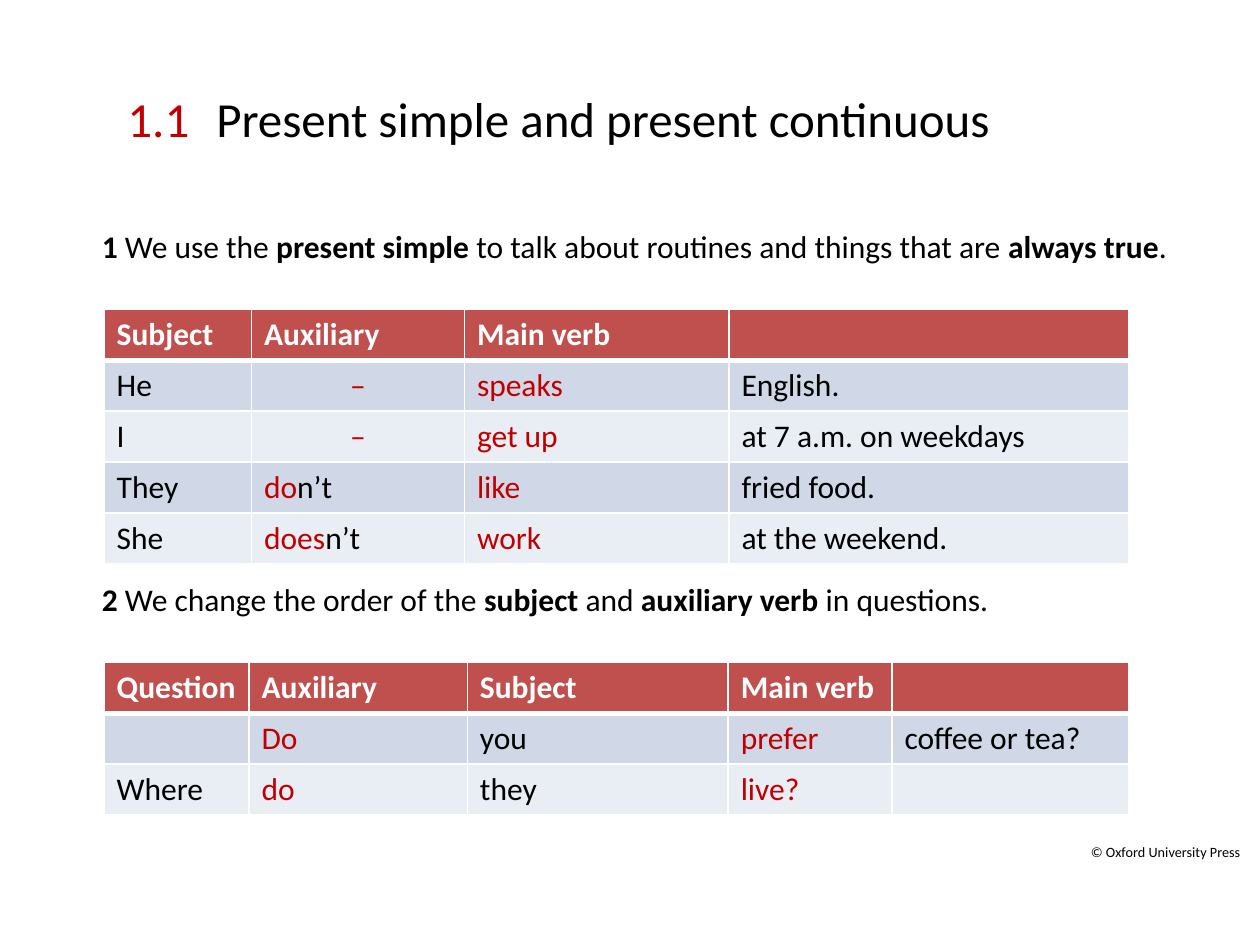
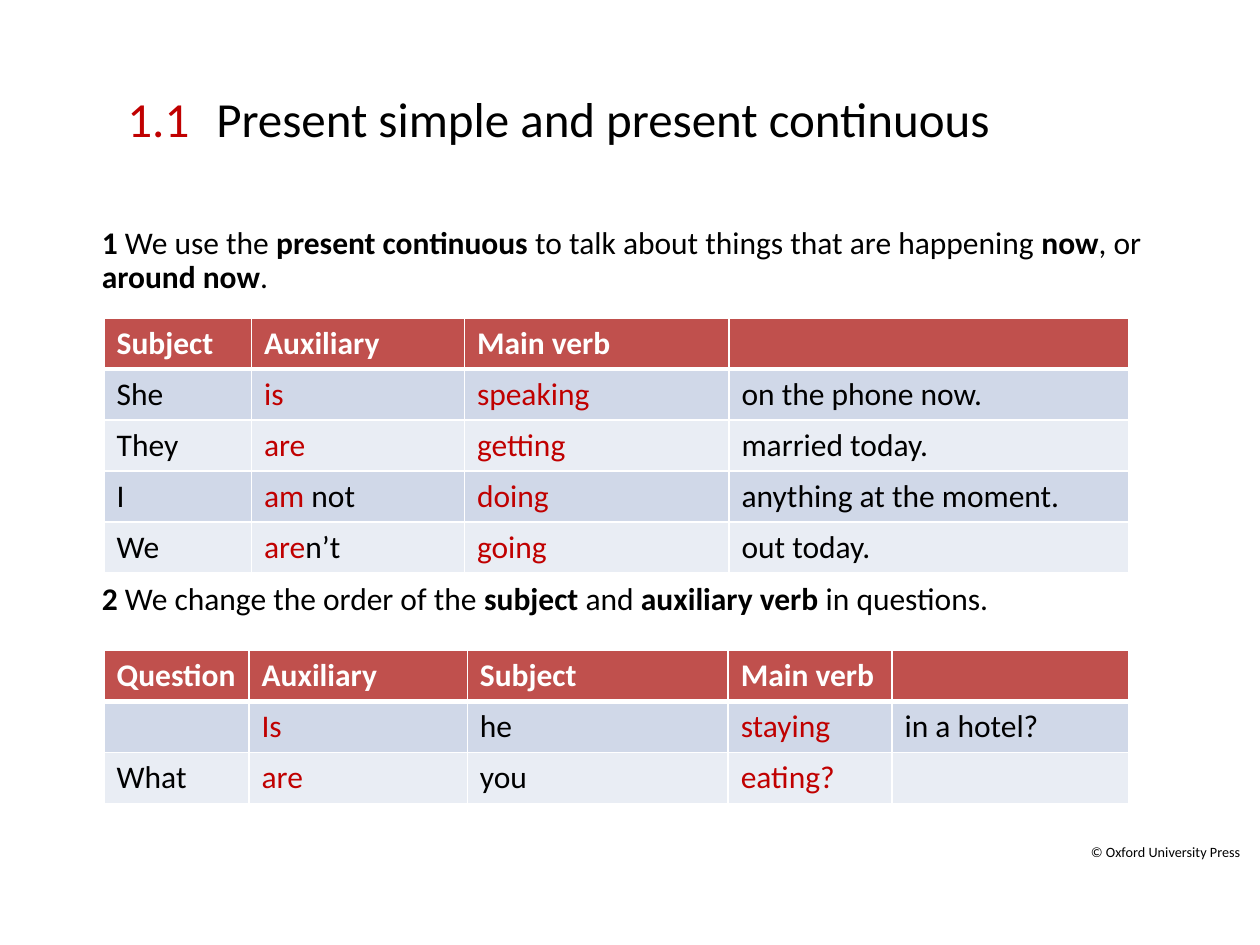
"""Build two grammar slides on the present simple and present continuous."""

from dataclasses import dataclass
from typing import Any, NamedTuple

from lxml import etree
from pptx import Presentation
from pptx import slide as slides, table as tables, util as u
from pptx.dml import color
from pptx.enum import text
from pptx.oxml import ns
from pptx.text import text as texts


@dataclass(frozen=True)
class Theme:
    font: str = "Calibri"
    title_size: float = 28
    body_size: float = 18
    footer_size: float = 14
    ink: str = "000000"
    accent: str = "C00000"
    white: str = "FFFFFF"
    header: str = "C0504D"
    bands: tuple[str, str] = ("D0D8E8", "E9EDF4")


class Box(NamedTuple):
    left: float
    top: float
    width: float
    height: float


class Grid(NamedTuple):
    top: float
    columns: tuple[float, ...]
    rows: list[tuple[str, ...]]


class GrammarSlide(NamedTuple):
    rule: str
    line_spacing: float
    rule_gap: float
    statements: Grid
    questions: Grid


THEME = Theme()
TITLE = "Present simple and present continuous"
UNIT = "1.1"
FOOTER = "© Oxford University Press"
QUESTION_RULE = "*2* We change the order of the *subject* and *auxiliary verb* in questions."
DASH = "*–*"

TITLE_BOX = Box(116.4, 22.32, 567.6, 90)
UNIT_BOX = Box(65.8, 46.8, 50.4, 41.04)
RULES_BOX = Box(51.12, 126.2, 632.88, 326.16)
FOOTER_BOX = Box(602.2, 476.64, 113.76, 18.72)

TABLE_LEFT = 59.5
ROW_HEIGHT = 29.16
THIN, THICK = 1, 3
STATEMENT_COLUMNS = (84.24, 121.68, 151.2, 228.24)
QUESTION_COLUMNS = (82.8, 124.8, 149.04, 93.6, 135.12)
STATEMENT_HEADER = ("Subject", "Auxiliary", "Main verb", "")
QUESTION_HEADER = ("Question", "Auxiliary", "Subject", "Main verb", "")

GRAMMAR_SLIDES = [
    GrammarSlide(
        "*1* We use the *present simple* to talk about routines and things that are *always true*.",
        1.0,
        180,
        Grid(176.7, STATEMENT_COLUMNS, [
            STATEMENT_HEADER,
            ("He", DASH, "*speaks*", "English."),
            ("I", DASH, "*get up*", "at 7 a.m. on weekdays"),
            ("They", "*do*n’t", "*like*", "fried food."),
            ("She", "*does*n’t", "*work*", "at the weekend."),
        ]),
        Grid(378.4, QUESTION_COLUMNS, [
            QUESTION_HEADER,
            ("", "*Do*", "you", "*prefer*", "coffee or tea?"),
            ("Where", "*do*", "they", "*live?*", ""),
        ]),
    ),
    GrammarSlide(
        "*1* We use the *present continuous* to talk about things that are happening *now*, "
        "or *around now*.",
        0.9,
        164.4,
        Grid(181.7, STATEMENT_COLUMNS, [
            STATEMENT_HEADER,
            ("She", "*is*", "*speaking*", "on the phone now."),
            ("They", "*are*", "*getting*", "married today."),
            ("I", "*am* not", "*doing*", "anything at the moment."),
            ("We", "*are*n’t", "*going*", "out today."),
        ]),
        Grid(371.6, QUESTION_COLUMNS, [
            QUESTION_HEADER,
            ("", "*Is*", "he", "*staying*", "in a hotel?"),
            ("What", "*are*", "you", "*eating?*", ""),
        ]),
    ),
]


def assign(target: Any, values: dict[str, Any]) -> None:
    for name, value in values.items():
        setattr(target, name, value)


def points(box: Box) -> list[u.Length]:
    return [u.Pt(length) for length in box]


def font_format(size: float, bold: bool = False) -> dict[str, Any]:
    return {"name": THEME.font, "size": u.Pt(size), "bold": bold}


def write(paragraph: texts._Paragraph, marked: str, size: float, ink: str = THEME.ink,
          bold: bool = False, marked_ink: str | None = None, marked_bold: bool = False) -> None:
    for index, part in enumerate(marked.split("*")):
        if not part:
            continue
        emphasised = index % 2 == 1
        run = paragraph.add_run()
        run.text = part
        assign(run.font, font_format(size, bold or (emphasised and marked_bold)))
        shade = marked_ink if emphasised and marked_ink else ink
        run.font.color.rgb = color.RGBColor.from_string(shade)


def add_text_box(slide: slides.Slide, box: Box, wrap: bool) -> texts.TextFrame:
    frame = slide.shapes.add_textbox(*points(box)).text_frame
    fit = text.MSO_AUTO_SIZE.NONE if wrap else text.MSO_AUTO_SIZE.SHAPE_TO_FIT_TEXT
    assign(frame, {"word_wrap": wrap, "auto_size": fit})
    return frame


def add_heading(slide: slides.Slide) -> None:
    title = slide.shapes.title
    assign(title, dict(zip(Box._fields, points(TITLE_BOX))))
    assign(title.text_frame, {"vertical_anchor": text.MSO_ANCHOR.MIDDLE,
                              "auto_size": text.MSO_AUTO_SIZE.NONE})
    paragraph = title.text_frame.paragraphs[0]
    paragraph.alignment = text.PP_ALIGN.LEFT
    write(paragraph, TITLE, THEME.title_size)
    unit = add_text_box(slide, UNIT_BOX, wrap=False)
    write(unit.paragraphs[0], UNIT, THEME.title_size, THEME.accent)


def add_rules(slide: slides.Slide, content: GrammarSlide) -> None:
    frame = add_text_box(slide, RULES_BOX, wrap=True)
    first, second = frame.paragraphs[0], frame.add_paragraph()
    second.space_before = u.Pt(content.rule_gap)
    for paragraph, rule in ((first, content.rule), (second, QUESTION_RULE)):
        paragraph.line_spacing = content.line_spacing
        write(paragraph, rule, THEME.body_size, marked_bold=True)


def add_borders(cell: tables._Cell, top: float, bottom: float) -> None:
    properties = cell._tc.get_or_add_tcPr()
    for side, width in {"L": THIN, "R": THIN, "T": top, "B": bottom}.items():
        line = etree.SubElement(properties, ns.qn(f"a:ln{side}"), w=str(u.Pt(width)))
        fill = etree.SubElement(line, ns.qn("a:solidFill"))
        etree.SubElement(fill, ns.qn("a:srgbClr"), val=THEME.white)


def fill_cell(cell: tables._Cell, marked: str, row_index: int) -> None:
    is_header = row_index == 0
    add_borders(cell, THICK if row_index == 1 else THIN, THICK if is_header else THIN)
    cell.fill.solid()
    shade = THEME.header if is_header else THEME.bands[(row_index - 1) % 2]
    cell.fill.fore_color.rgb = color.RGBColor.from_string(shade)
    paragraph = cell.text_frame.paragraphs[0]
    if marked == DASH:
        paragraph.alignment = text.PP_ALIGN.CENTER
    write(paragraph, marked, THEME.body_size, THEME.white if is_header else THEME.ink,
          bold=is_header, marked_ink=THEME.accent)


def add_grid(slide: slides.Slide, grid: Grid) -> None:
    box = Box(TABLE_LEFT, grid.top, sum(grid.columns), ROW_HEIGHT * len(grid.rows))
    table = slide.shapes.add_table(len(grid.rows), len(grid.columns), *points(box)).table
    for column, width in zip(table.columns, grid.columns):
        column.width = u.Pt(width)
    for row_index, values in enumerate(grid.rows):
        table.rows[row_index].height = u.Pt(ROW_HEIGHT)
        for column_index, marked in enumerate(values):
            fill_cell(table.cell(row_index, column_index), marked, row_index)


def add_footer(slide: slides.Slide) -> None:
    paragraph = add_text_box(slide, FOOTER_BOX, wrap=False).paragraphs[0]
    paragraph.alignment = text.PP_ALIGN.RIGHT
    write(paragraph, FOOTER, THEME.footer_size)
    paragraph.runs[0]._r.get_or_add_rPr().set("baseline", "30000")


def main() -> None:
    presentation = Presentation()
    assign(presentation, {"slide_width": u.Pt(720), "slide_height": u.Pt(540)})
    title_only = presentation.slide_layouts.get_by_name("Title Only")
    for content in GRAMMAR_SLIDES:
        slide = presentation.slides.add_slide(title_only)
        add_footer(slide)
        add_heading(slide)
        add_rules(slide, content)
        add_grid(slide, content.statements)
        add_grid(slide, content.questions)
    presentation.save("out.pptx")


if __name__ == "__main__":
    main()
